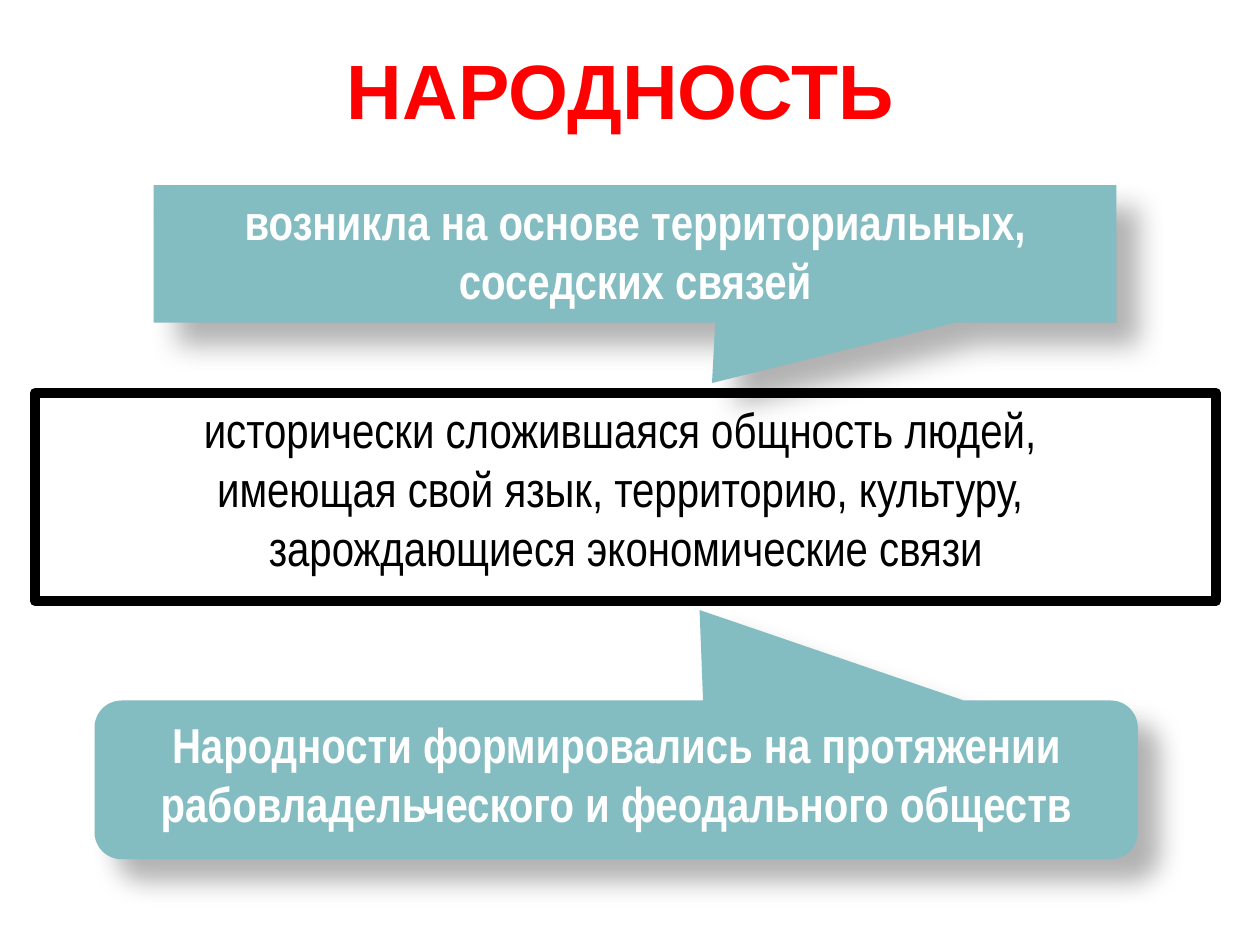
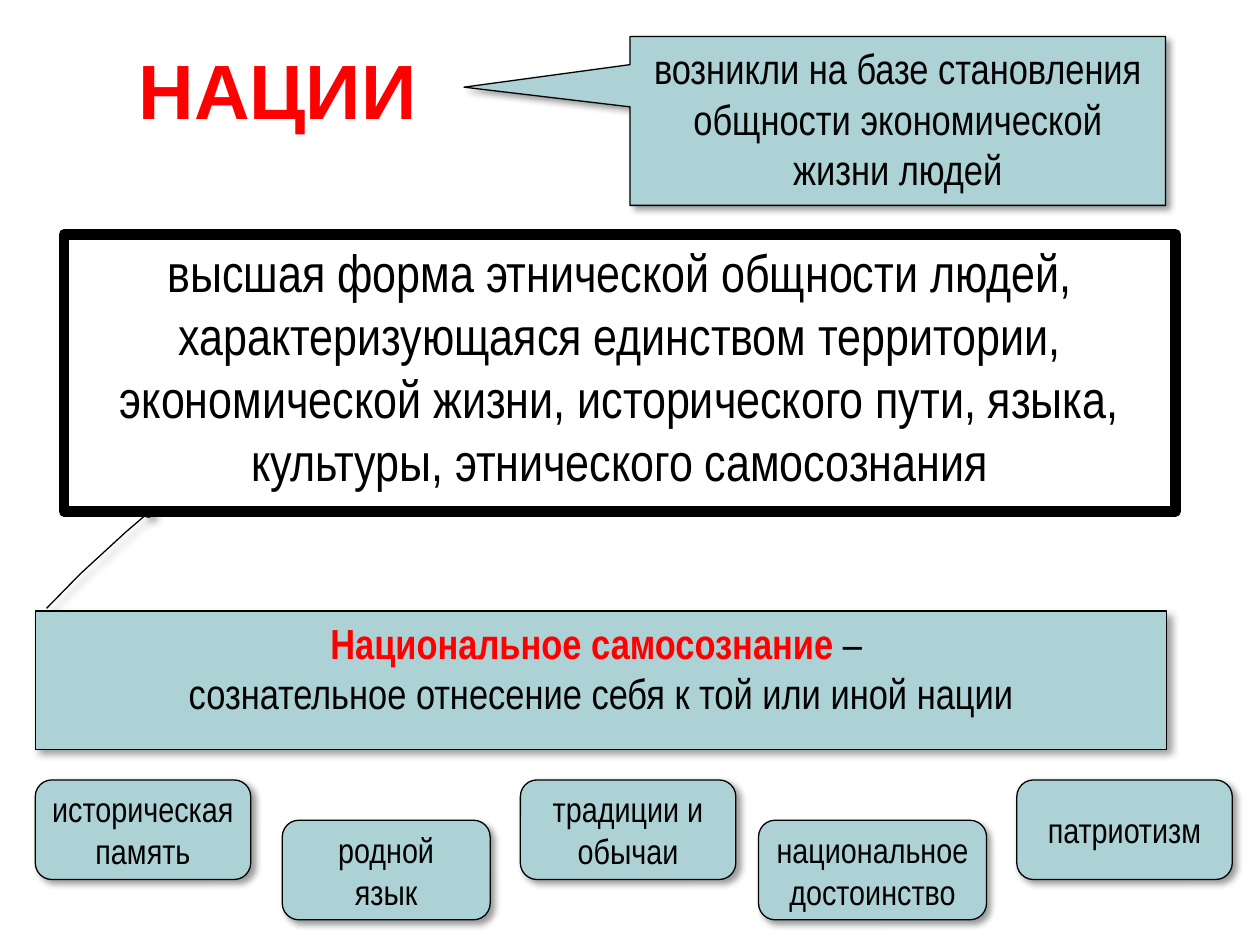
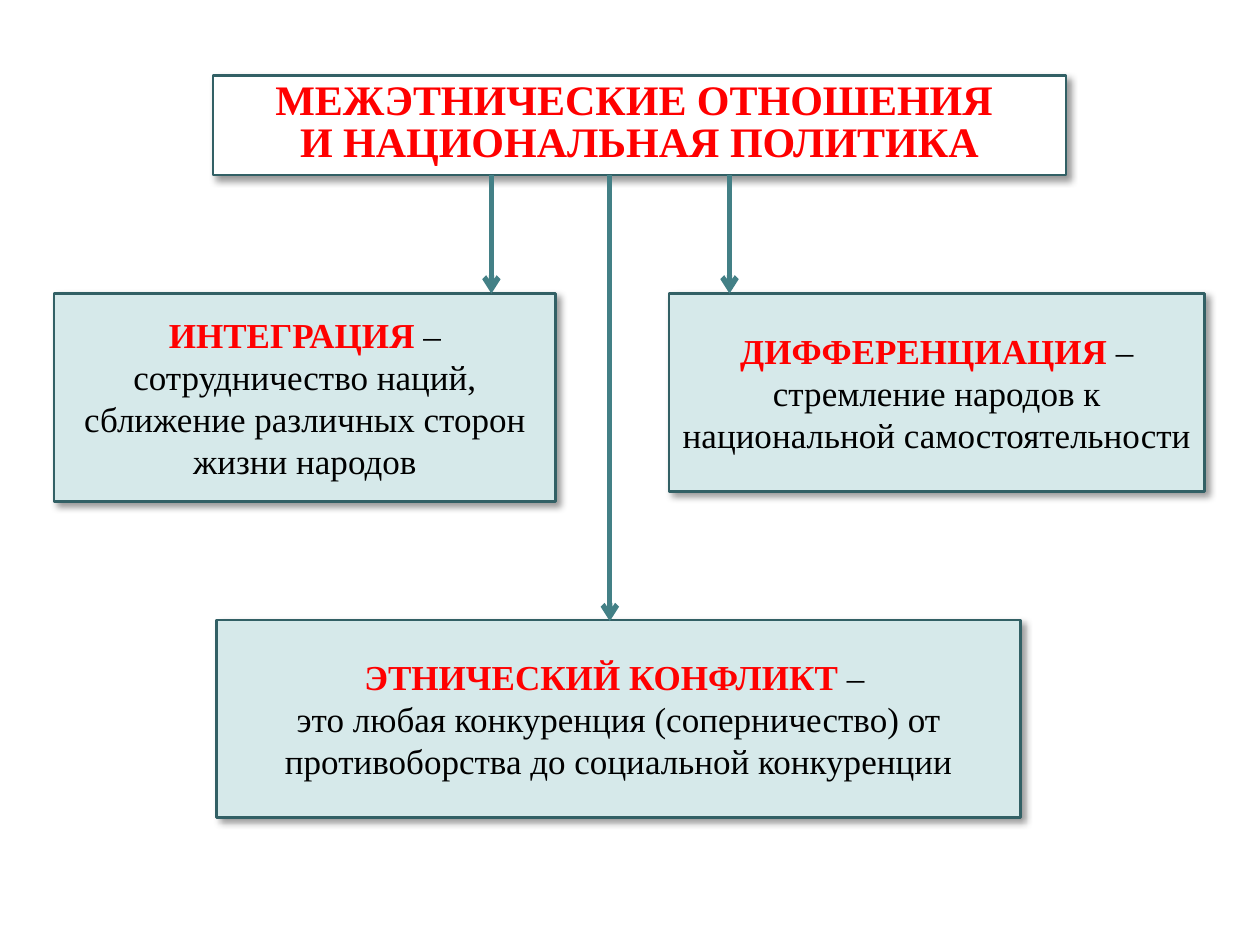
from dataclasses import dataclass

from lxml.etree import SubElement
from pptx import Presentation
from pptx.dml.color import RGBColor
from pptx.enum.shapes import MSO_CONNECTOR, MSO_SHAPE
from pptx.enum.text import MSO_ANCHOR, MSO_AUTO_SIZE, PP_ALIGN
from pptx.oxml.ns import qn
from pptx.util import Inches, Pt

COLORS = {
    "black": "000000",
    "white": "FFFFFF",
    "red": "FF0000",
    "teal": "83BCC1",
    "light_teal": "ADD2D6",
    "pale_teal": "D6E9EA",
    "dark_teal": "326065",
    "arrow": "438086",
}


@dataclass
class TextStyle:
    font: str
    size: int
    color: str = "black"
    bold: bool = False
    anchor: MSO_ANCHOR = MSO_ANCHOR.TOP
    wrap: bool = True
    spacing: float = 1.0


@dataclass
class BoxStyle:
    fill: str = ""
    line: str = ""
    width: float = 0.75
    shadow: tuple = ()


DEEP_SHADOW = (30, 15, 18)
SOFT_SHADOW = (40, 4, 3)

HEADING = TextStyle("Arial", 44, "red", True)
POLICY_HEADING = TextStyle("Times New Roman", 24, "red", True, spacing=0.83)
REMARK = TextStyle("Arial Narrow", 28, "white", True)
ORIGIN = TextStyle("Arial Narrow", 24)
FEATURE = TextStyle("Arial Narrow", 20, anchor=MSO_ANCHOR.MIDDLE, wrap=False)
PROCESS = TextStyle("Times New Roman", 20, anchor=MSO_ANCHOR.MIDDLE)

PLAIN = BoxStyle()
FRAME = BoxStyle(line="black", width=6)
BUBBLE = BoxStyle("teal", shadow=DEEP_SHADOW)
CARD = BoxStyle("light_teal", "black", shadow=SOFT_SHADOW)
POLICY = BoxStyle("white", "dark_teal", 1.5, SOFT_SHADOW)
PROCESS_BOX = BoxStyle("pale_teal", "dark_teal", 1.5, SOFT_SHADOW)


def rgb(name):
    return RGBColor.from_string(COLORS[name])


def add_term(paragraph, term, meaning, style):
    for text, color, bold in ((term, "red", True), (meaning, style.color, False)):
        run = paragraph.add_run()
        run.text = text
        run.font.color.rgb = rgb(color)
        run.font.bold = bold


def write(shape, paragraphs, style):
    frame = shape.text_frame
    frame.auto_size = MSO_AUTO_SIZE.NONE
    frame.word_wrap = style.wrap
    frame.vertical_anchor = style.anchor
    for index, content in enumerate(paragraphs):
        paragraph = frame.add_paragraph() if index else frame.paragraphs[0]
        paragraph.alignment = PP_ALIGN.CENTER
        paragraph.line_spacing = style.spacing
        paragraph.font.name = style.font
        paragraph.font.size = Pt(style.size)
        if isinstance(content, tuple):
            add_term(paragraph, *content, style)
        else:
            paragraph.add_run().text = content
            paragraph.font.color.rgb = rgb(style.color)
            paragraph.font.bold = style.bold


def add_shadow(shape, alpha, blur, distance):
    effects = shape.element.spPr.find(qn("a:effectLst"))
    shadow = SubElement(
        effects, qn("a:outerShdw"), blurRad=str(Pt(blur)), dist=str(Pt(distance)),
        dir=str(45 * 60000), algn="tl", rotWithShape="0",
    )
    color = SubElement(shadow, qn("a:srgbClr"), val=COLORS["black"])
    SubElement(color, qn("a:alpha"), val=str(alpha * 1000))


def paint(shape, box):
    if box.fill:
        shape.fill.solid()
        shape.fill.fore_color.rgb = rgb(box.fill)
    else:
        shape.fill.background()
    if box.line:
        shape.line.color.rgb = rgb(box.line)
        shape.line.width = Pt(box.width)
    else:
        shape.line.fill.background()


def add_tail_end(shape, kind):
    SubElement(shape.element.spPr.find(qn("a:ln")), qn("a:tailEnd"), type=kind)


def add_box(slide, place, paragraphs, text, box, kind=MSO_SHAPE.RECTANGLE, adjust=()):
    shape = slide.shapes.add_shape(kind, *map(Inches, place))
    for index, value in enumerate(adjust):
        shape.adjustments[index] = value
    paint(shape, box)
    shape.shadow.inherit = False
    if box.shadow:
        add_shadow(shape, *box.shadow)
    write(shape, paragraphs, text)
    return shape


def add_title(slide, place, paragraphs, text=HEADING, box=PLAIN):
    title = slide.shapes.title
    title.left, title.top, title.width, title.height = map(Inches, place)
    paint(title, box)
    if box.shadow:
        title.shadow.inherit = False
        add_shadow(title, *box.shadow)
    write(title, paragraphs, text)


def add_arrow(slide, x, top, bottom):
    arrow = slide.shapes.add_connector(
        MSO_CONNECTOR.STRAIGHT, Inches(x), Inches(top), Inches(x), Inches(bottom)
    )
    arrow.line.color.rgb = rgb("arrow")
    arrow.line.width = Pt(3)
    SubElement(arrow.element.spPr, qn("a:effectLst"))
    add_tail_end(arrow, "arrow")


def build_nationality(slide):
    add_title(slide, (0.75, 0.29, 8.35, 0.84), ["НАРОДНОСТЬ"])
    add_box(
        slide, (1.22, 1.47, 7.64, 1.09),
        ["возникла на основе территориальных, соседских связей"],
        REMARK, BUBBLE, MSO_SHAPE.RECTANGULAR_CALLOUT, (0.08, 0.94),
    )
    add_box(
        slide, (0.28, 3.12, 9.37, 1.65),
        [
            "исторически сложившаяся общность людей, ",
            "имеющая свой язык, территорию, культуру, ",
            "зарождающиеся экономические связи",
        ],
        TextStyle("Arial Narrow", 28), FRAME,
    )
    add_box(
        slide, (0.75, 5.56, 8.28, 1.26),
        ["Народности формировались на протяжении рабовладельческого и феодального обществ"],
        REMARK, BUBBLE, MSO_SHAPE.ROUNDED_RECTANGULAR_CALLOUT, (0.08, -1.07, 0.17),
    )


def build_nations(slide):
    add_title(slide, (0, 0.29, 4.41, 0.84), ["НАЦИИ"])
    add_box(
        slide, (5, 0.29, 4.25, 1.34),
        ["возникли на базе становления общности экономической жизни людей"],
        ORIGIN, CARD, MSO_SHAPE.RECTANGULAR_CALLOUT, (-0.81, -0.2),
    )
    add_box(
        slide, (0.51, 1.86, 8.82, 2.2),
        ["высшая форма этнической общности людей, характеризующаяся единством "
         "территории, экономической жизни, исторического пути, языка, культуры, "
         "этнического самосознания"],
        TextStyle("Arial Narrow", 30), FRAME,
    )
    awareness = add_box(
        slide, (0.28, 4.85, 8.98, 1.1),
        [
            ("Национальное самосознание ", "– "),
            "сознательное отнесение себя к той или иной нации",
        ],
        ORIGIN, CARD, MSO_SHAPE.LINE_CALLOUT_3,
        (-0.02, 0.01, -0.27, 0.04, -0.57, 0.08, -0.71, 0.1),
    )
    add_tail_end(awareness, "oval")
    features = [
        (0.28, 1.71, ["историческая", "память"]),
        (2.24, 1.65, ["родной", "язык"]),
        (4.13, 1.71, ["традиции и", "обычаи"]),
        (6.02, 1.81, ["национальное", "достоинство"]),
        (8.07, 1.71, ["патриотизм"]),
    ]
    for index, (left, width, words) in enumerate(features):
        top = 6.51 if index % 2 else 6.19
        add_box(slide, (left, top, width, 0.79), words,
                FEATURE, CARD, MSO_SHAPE.ROUNDED_RECTANGLE)


def build_policy(slide):
    add_title(
        slide, (1.69, 0.6, 6.77, 0.79),
        ["МЕЖЭТНИЧЕСКИЕ ОТНОШЕНИЯ ", "И НАЦИОНАЛЬНАЯ ПОЛИТИКА"],
        POLICY_HEADING, POLICY,
    )
    processes = [
        ((0.43, 2.33, 3.98, 1.65),
         [("ИНТЕГРАЦИЯ ",
           "– сотрудничество наций, сближение различных сторон жизни народов")]),
        ((5.31, 2.33, 4.25, 1.57),
         [("ДИФФЕРЕНЦИАЦИЯ ",
           "– стремление народов к национальной самостоятельности")]),
        ((1.72, 4.92, 6.38, 1.57),
         [("ЭТНИЧЕСКИЙ КОНФЛИКТ ", "– "),
          "это любая конкуренция (соперничество) от противоборства "
          "до социальной конкуренции"]),
    ]
    for place, definition in processes:
        add_box(slide, place, definition, PROCESS, PROCESS_BOX)
    for x, bottom in ((3.9, 2.33), (5.79, 2.33), (4.84, 4.93)):
        add_arrow(slide, x, 1.39, bottom)


def main():
    deck = Presentation()
    deck.slide_width, deck.slide_height = Inches(10), Inches(7.5)
    title_only = deck.slide_layouts.get_by_name("Title Only")
    for build in (build_nationality, build_nations, build_policy):
        build(deck.slides.add_slide(title_only))
    deck.save("out.pptx")


if __name__ == "__main__":
    main()
